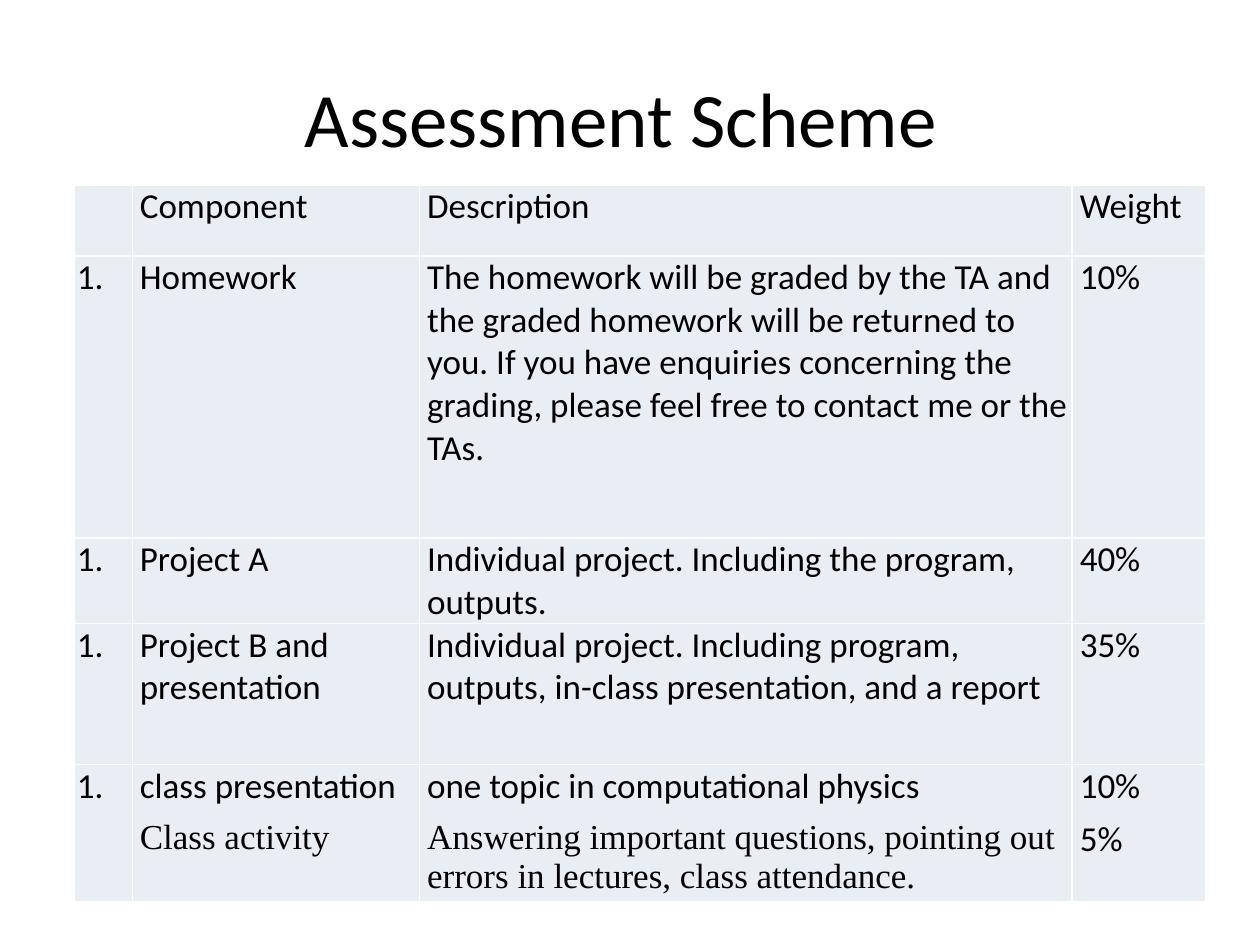
from lxml import etree
from pptx import Presentation
from pptx.dml.color import RGBColor
from pptx.enum.text import MSO_ANCHOR, PP_ALIGN
from pptx.oxml.ns import qn
from pptx.util import Inches, Pt

CENTER = PP_ALIGN.CENTER
MIDDLE = MSO_ANCHOR.MIDDLE
BODY_FONT, ACTIVITY_FONT = "Calibri", "Times New Roman"
INK, CELL_FILL, RULE = "000000", "E9EDF4", "FFFFFF"
COLUMN_WIDTHS = [0.46, 2.28, 5.18, 1.06]
ROW_HEIGHTS = [0.56, 2.24, 0.68, 1.12, 1.04]
CELL_FORMAT = {
    "margin_left": Inches(0.02),
    "margin_right": Inches(0.02),
    "margin_top": 0,
    "margin_bottom": 0,
}
PARAGRAPH_FORMAT = {"space_before": Pt(3), "space_after": Pt(3)}
TEXT_INDENT = Inches(0.04)
SCHEME = [
    ["", "Component", "Description", "Weight"],
    [
        "1.",
        "Homework",
        "The homework will be graded by the TA and the graded homework will be "
        "returned to you. If you have enquiries concerning the grading, please "
        "feel free to contact me or the TAs.",
        "10%",
    ],
    ["1.", "Project A", "Individual project. Including the program, outputs.", "40%"],
    [
        "1.",
        "Project B and presentation",
        "Individual project. Including program, outputs, in-class presentation, "
        "and a report",
        "35%",
    ],
    [
        "1.",
        "class presentation\nClass activity",
        "one topic in computational physics\nAnswering important questions, "
        "pointing out errors in lectures, class attendance.",
        "10%\n5%",
    ],
]


def rgb(code):
    """Turn a hex string into a colour."""
    return RGBColor.from_string(code)


def apply_format(target, values):
    """Set each named attribute on the target."""
    for name, value in values.items():
        setattr(target, name, value)


def write_run(paragraph, wording, size, font=BODY_FONT):
    """Add one styled run to a paragraph."""
    run = paragraph.add_run()
    run.text = wording
    apply_format(run.font, {"size": Pt(size), "name": font})
    run.font.color.rgb = rgb(INK)


def add_title(slide, wording, width, height):
    """Place the centred heading across the top of the slide."""
    heading = slide.shapes.add_textbox(
        int(width * 0.05), int(height * 0.04), int(width * 0.9), int(height / 6)
    )
    frame = heading.text_frame
    apply_format(frame, {"word_wrap": True, "vertical_anchor": MIDDLE})
    frame.paragraphs[0].alignment = CENTER
    write_run(frame.paragraphs[0], wording, 44)


def rule_cell(cell):
    """Fill a cell and draw thin rules on its four sides."""
    properties = cell._tc.get_or_add_tcPr()
    for side in ("lnL", "lnR", "lnT", "lnB"):
        line = etree.SubElement(properties, qn(f"a:{side}"), w=str(Pt(1)))
        paint = etree.SubElement(line, qn("a:solidFill"))
        etree.SubElement(paint, qn("a:srgbClr"), val=RULE)
    cell.fill.solid()
    cell.fill.fore_color.rgb = rgb(CELL_FILL)


def fill_cell(cell, wording, column):
    """Write the lines of a cell, with the class activity in its own font."""
    apply_format(cell, CELL_FORMAT)
    rule_cell(cell)
    for index, line in enumerate(wording.split("\n")):
        frame = cell.text_frame
        paragraph = frame.add_paragraph() if index else frame.paragraphs[0]
        apply_format(paragraph, PARAGRAPH_FORMAT)
        if column:
            paragraph._p.get_or_add_pPr().set("marL", str(TEXT_INDENT))
        is_activity = index and column in (1, 2)
        write_run(paragraph, line, 20, ACTIVITY_FONT if is_activity else BODY_FONT)


def add_scheme(slide, left, top):
    """Build the assessment table from its column and row sizes."""
    table = slide.shapes.add_table(
        len(ROW_HEIGHTS), len(COLUMN_WIDTHS), Inches(left), Inches(top),
        Inches(sum(COLUMN_WIDTHS)), Inches(sum(ROW_HEIGHTS)),
    ).table
    apply_format(table, {"first_row": False, "horz_banding": False})
    for column, width in zip(table.columns, COLUMN_WIDTHS):
        column.width = Inches(width)
    for row, height, entries in zip(table.rows, ROW_HEIGHTS, SCHEME):
        row.height = Inches(height)
        for column, wording in enumerate(entries):
            fill_cell(row.cells[column], wording, column)


def main():
    """Create and save the assessment slide."""
    deck = Presentation()
    apply_format(deck, {"slide_width": Inches(10), "slide_height": Inches(7.5)})
    slide = deck.slides.add_slide(deck.slide_layouts[6])
    add_title(slide, "Assessment Scheme ", deck.slide_width, deck.slide_height)
    add_scheme(slide, 0.59, 1.47)
    deck.save("out.pptx")


if __name__ == "__main__":
    main()
